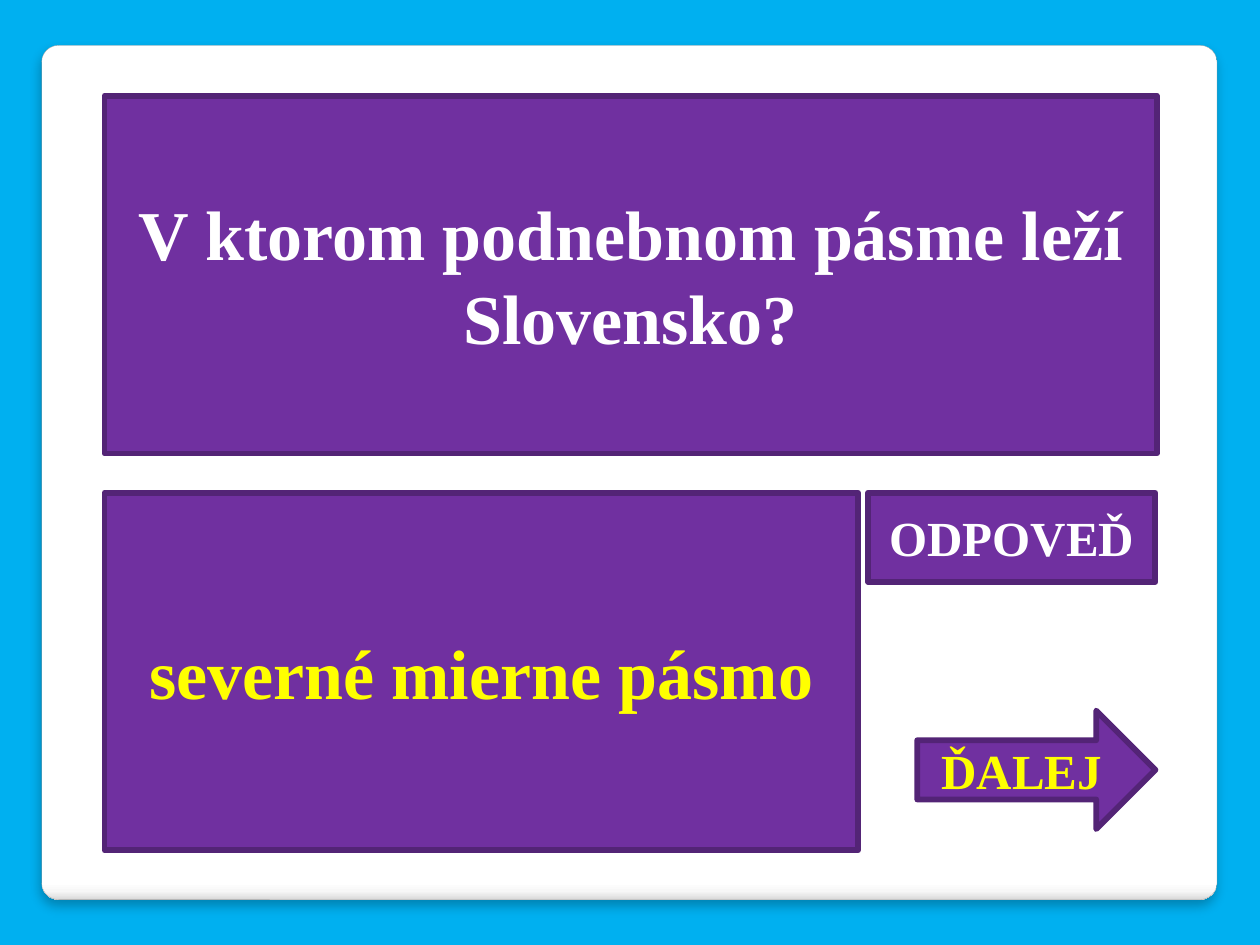
from lxml.etree import SubElement
from pptx import Presentation
from pptx.dml.color import RGBColor
from pptx.enum.shapes import MSO_SHAPE
from pptx.enum.text import MSO_ANCHOR, PP_ALIGN
from pptx.oxml import parse_xml
from pptx.oxml.ns import nsdecls, qn
from pptx.util import Inches, Pt

SKY = RGBColor(0x00, 0xB0, 0xF0)
GRAY = RGBColor(0xA4, 0xA4, 0xA4)
PURPLE = RGBColor(0x70, 0x30, 0xA0)
DARK_PURPLE = RGBColor(0x53, 0x24, 0x76)
WHITE = RGBColor(0xFF, 0xFF, 0xFF)
YELLOW = RGBColor(0xFF, 0xFF, 0x00)

presentation = Presentation()
presentation.slide_width = Inches(10)
presentation.slide_height = Inches(7.5)
slide = presentation.slides.add_slide(presentation.slide_layouts[6])
slide.background.fill.solid()
slide.background.fill.fore_color.rgb = SKY


def add_outlined(kind, box, line_color, line_width):
    shape = slide.shapes.add_shape(kind, *map(Inches, box))
    shape.shadow.inherit = False
    shape.line.color.rgb = line_color
    shape.line.width = Pt(line_width)
    return shape


# White card with a shaded bottom edge and a soft shadow
card = add_outlined(MSO_SHAPE.ROUNDED_RECTANGLE, (0.33, 0.36, 9.33, 6.78), GRAY, 0.16)
card.adjustments[0] = 0.02
card.fill.gradient()
card.fill.gradient_angle = 270
stops = card.element.spPr.find(qn("a:gradFill")).find(qn("a:gsLst"))
for old_stop in list(stops):
    stops.remove(old_stop)
for percent, color in [(0, "FFFFFF"), (98, "FFFFFF"), (99, "F7F7F7"), (100, "DADADA")]:
    stop = SubElement(stops, qn("a:gs"), pos=str(percent * 1000))
    SubElement(stop, qn("a:srgbClr"), val=color)
card.element.spPr.find(qn("a:effectLst")).append(parse_xml(
    f'<a:outerShdw {nsdecls("a")} blurRad="{Pt(6)}" dist="{Pt(4)}" dir="5400000" '
    'algn="t" rotWithShape="0"><a:srgbClr val="000000"><a:alpha val="25000"/>'
    '</a:srgbClr></a:outerShdw>'))

# Question, answer and the two buttons
panels = [
    (MSO_SHAPE.RECTANGLE, (0.83, 0.76, 8.35, 2.84),
     "V ktorom podnebnom pásme leží Slovensko?", 40, WHITE),
    (MSO_SHAPE.RECTANGLE, (0.83, 3.91, 5.98, 2.84), "severné mierne pásmo", 40, YELLOW),
    (MSO_SHAPE.RECTANGLE, (6.89, 3.91, 2.28, 0.71), "ODPOVEĎ", 28, WHITE),
    (MSO_SHAPE.RIGHT_ARROW, (7.28, 5.64, 1.89, 0.94), "ĎALEJ", 28, YELLOW),
]
for kind, box, wording, size, color in panels:
    panel = add_outlined(kind, box, DARK_PURPLE, 3.35)
    panel.fill.solid()
    panel.fill.fore_color.rgb = PURPLE
    frame = panel.text_frame
    frame.word_wrap = True
    frame.vertical_anchor = MSO_ANCHOR.MIDDLE
    paragraph = frame.paragraphs[0]
    paragraph.alignment = PP_ALIGN.CENTER
    run = paragraph.add_run()
    run.text = wording
    run.font.name = "Times New Roman"
    run.font.size = Pt(size)
    run.font.bold = True
    run.font.color.rgb = color

presentation.save("out.pptx")
